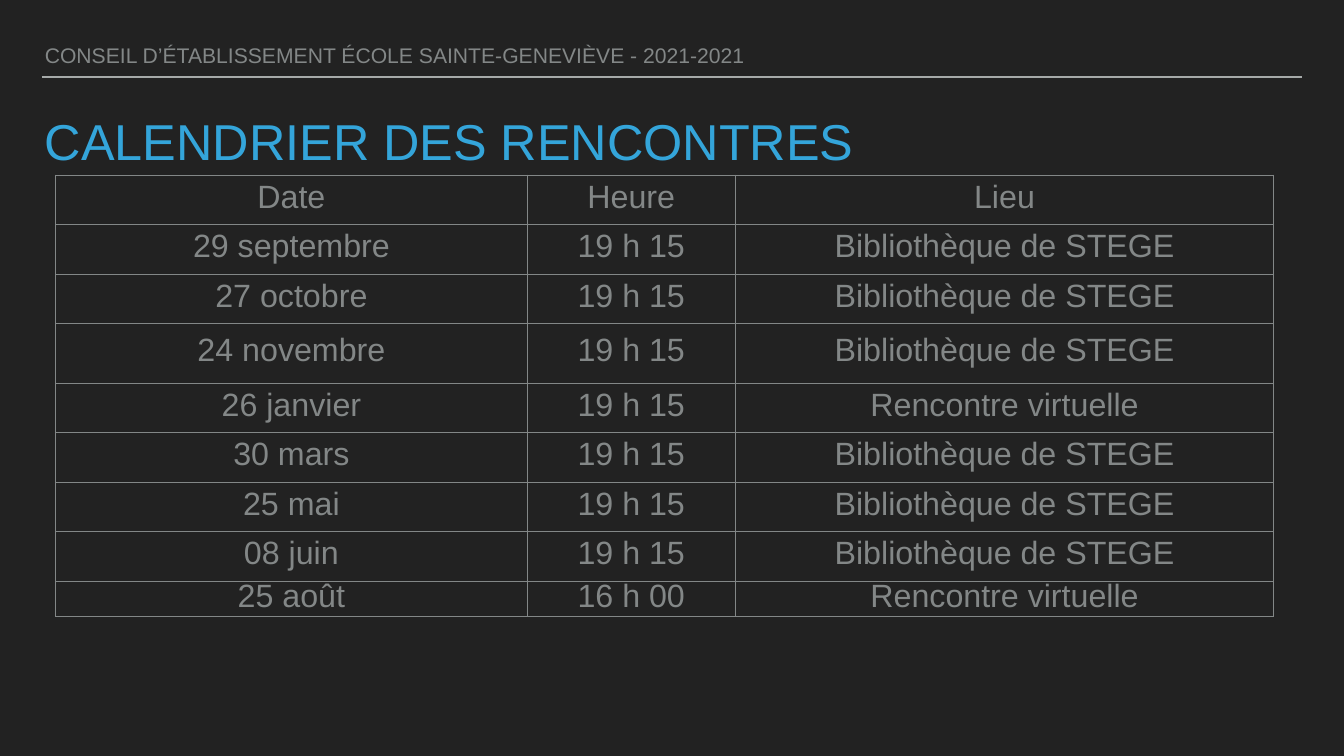
"""Build the slide listing the school council's meeting calendar."""
from dataclasses import dataclass

from lxml import etree
from pptx import Presentation
from pptx import util as u
from pptx.dml.color import RGBColor
from pptx.enum import shapes, text
from pptx.oxml.ns import qn

Pt = u.Pt


@dataclass(frozen=True)
class Theme:
    """Colours, font and sizes shared by the slide."""
    background: str = "222222"
    body: str = "838787"
    title: str = "34A5DA"
    rule: str = "A6AAA9"
    font: str = "Arial"
    header_size: float = 30.2
    title_size: float = 72
    table_size: float = 46
    line_spacing: float = 0.8
    inset: float = 4


THEME = Theme()
LIBRARY = "Bibliothèque de STEGE"
VIRTUAL = "Rencontre virtuelle"
MEETINGS = [
    ("Date", "Heure", "Lieu"),
    ("29 septembre", "19 h 15", LIBRARY),
    ("27 octobre", "19 h 15", LIBRARY),
    ("24 novembre", "19 h 15", LIBRARY),
    ("26 janvier", "19 h 15", VIRTUAL),
    ("30 mars", "19 h 15", LIBRARY),
    ("25 mai", "19 h 15", LIBRARY),
    ("08 juin", "19 h 15", LIBRARY),
    ("25 août", "16 h 00", VIRTUAL),
]
COLUMN_WIDTHS = [673.5, 297.5, 769]
ROW_HEIGHT = 70.8
SPECIAL_HEIGHTS = {"24 novembre": 84.7, "25 août": 49.6}


def write(frame, words, size, color=THEME.body, align=text.PP_ALIGN.LEFT):
    """Write one formatted paragraph into a text frame."""
    paragraph = frame.paragraphs[0]
    paragraph.alignment = align
    paragraph.line_spacing = THEME.line_spacing
    run = paragraph.add_run()
    run.text = words
    run.font.name = THEME.font
    run.font.size = Pt(size)
    run.font.color.rgb = RGBColor.from_string(color)


def add_text(slide, box, words, anchor=text.MSO_ANCHOR.TOP, **style):
    """Add a wrapping text box with even insets."""
    frame = slide.shapes.add_textbox(*map(Pt, box)).text_frame
    frame.word_wrap = True
    frame.vertical_anchor = anchor
    frame.margin_left = frame.margin_right = Pt(THEME.inset)
    frame.margin_top = frame.margin_bottom = Pt(THEME.inset)
    write(frame, words, **style)


def add_header(slide, box):
    """Place the council's name above a full-width rule."""
    left, top, width, height = box
    add_text(slide, (left, top, 1650, 43),
             "CONSEIL D’ÉTABLISSEMENT ÉCOLE SAINTE-GENEVIÈVE - 2021-2021",
             anchor=text.MSO_ANCHOR.BOTTOM, size=THEME.header_size)
    bottom = top + height
    rule = slide.shapes.add_connector(
        shapes.MSO_CONNECTOR.STRAIGHT,
        Pt(left), Pt(bottom), Pt(left + width), Pt(bottom))
    rule.line.color.rgb = RGBColor.from_string(THEME.rule)
    rule.line.width = Pt(2)
    etree.SubElement(rule._element.spPr, qn("a:effectLst"))


def add_borders(cell, color, width):
    """Draw the four borders of a table cell."""
    properties = cell._tc.get_or_add_tcPr()
    for side in ("lnL", "lnR", "lnT", "lnB"):
        border = etree.SubElement(properties, qn(f"a:{side}"), w=str(Pt(width)))
        fill = etree.SubElement(border, qn("a:solidFill"))
        etree.SubElement(fill, qn("a:srgbClr"), val=color)


def add_calendar(slide, box):
    """Place the table of meeting dates, times and places."""
    table = slide.shapes.add_table(
        len(MEETINGS), len(COLUMN_WIDTHS), *map(Pt, box)).table
    table.first_row = table.horz_banding = False
    for column, width in zip(table.columns, COLUMN_WIDTHS):
        column.width = Pt(width)
    for row, meeting in zip(table.rows, MEETINGS):
        row.height = Pt(SPECIAL_HEIGHTS.get(meeting[0], ROW_HEIGHT))
        for cell, words in zip(row.cells, meeting):
            add_borders(cell, THEME.body, 1)
            cell.fill.background()
            cell.vertical_anchor = text.MSO_ANCHOR.MIDDLE
            cell.margin_left = cell.margin_right = 0
            cell.margin_top = cell.margin_bottom = 0
            write(cell.text_frame, words, size=THEME.table_size,
                  align=text.PP_ALIGN.CENTER)


def main():
    """Assemble and save the slide."""
    deck = Presentation()
    deck.slide_width, deck.slide_height = Pt(1920), Pt(1080)
    slide = deck.slides.add_slide(deck.slide_layouts[6])
    fill = slide.background.fill
    fill.solid()
    fill.fore_color.rgb = RGBColor.from_string(THEME.background)
    add_header(slide, (60, 57, 1800, 53))
    add_text(slide, (60, 170, 1800, 80), "CALENDRIER DES RENCONTRES",
             size=THEME.title_size, color=THEME.title)
    add_calendar(slide, (79.5, 250, 1740, 630))
    deck.save("out.pptx")


if __name__ == "__main__":
    main()
